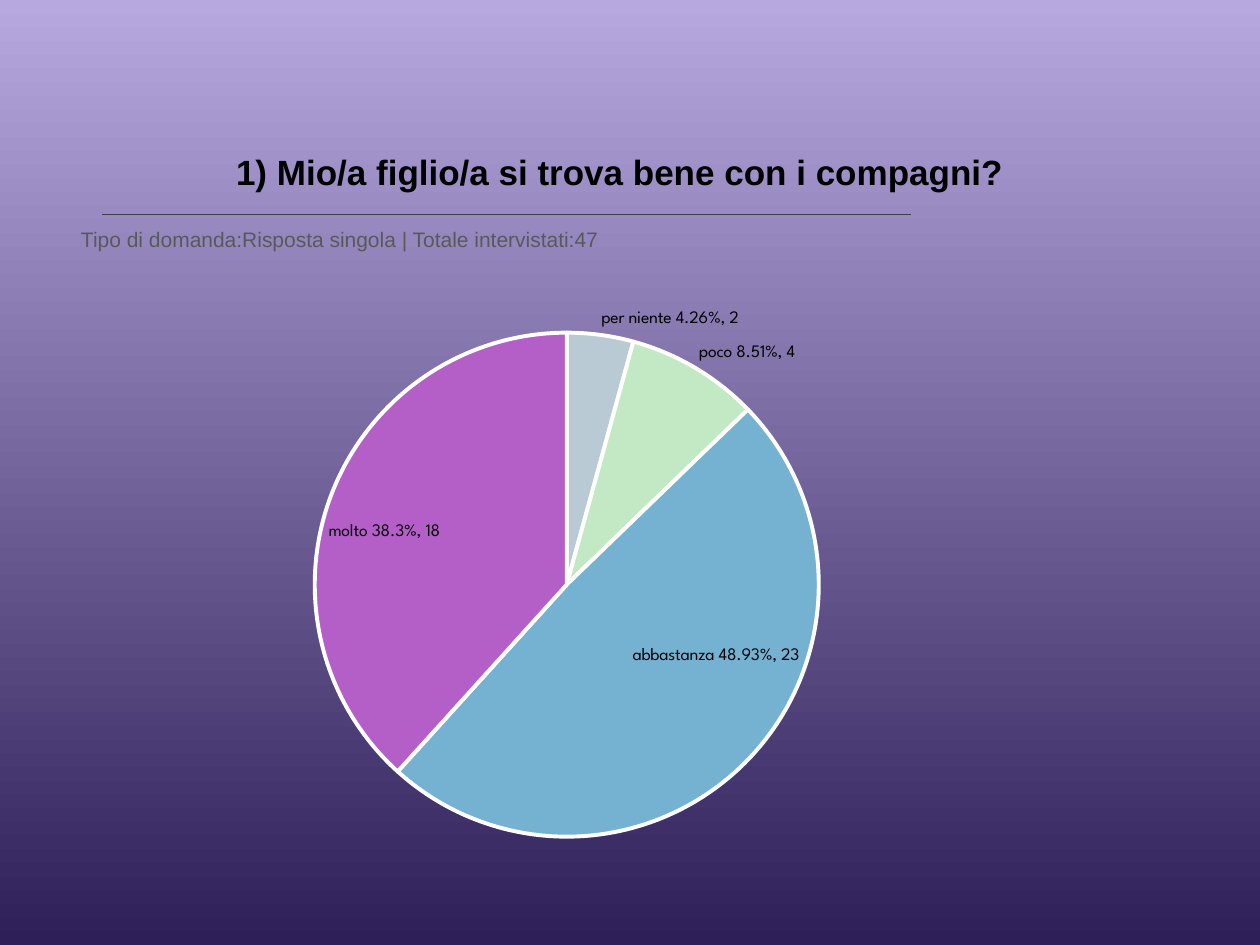
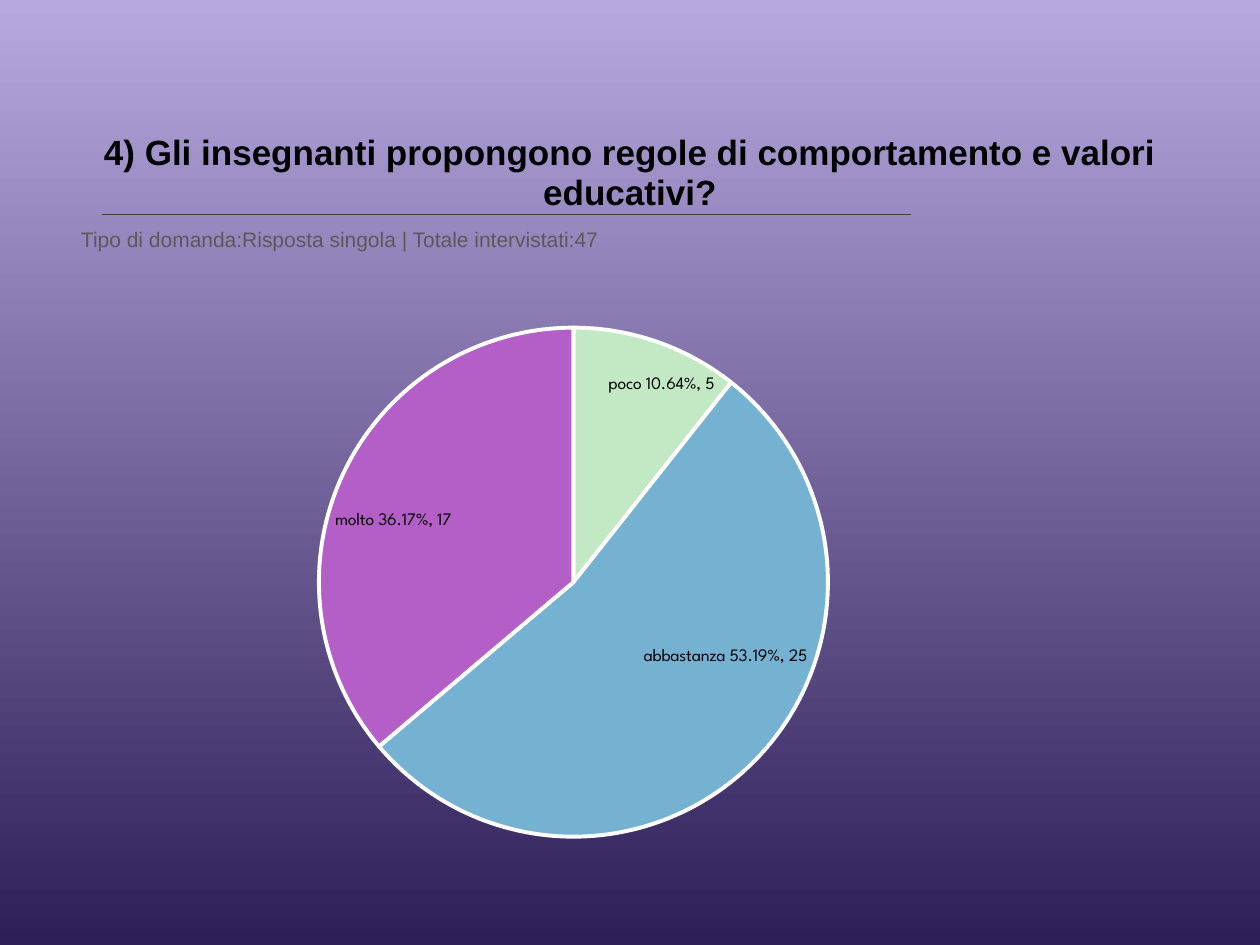
import pptx
import pptx.chart.data
import pptx.dml.color
import pptx.enum.chart
import pptx.enum.shapes
import pptx.enum.text
import pptx.oxml
import pptx.util
from pptx.util import Inches

# Shared look
TITLE_FONT = {"name": "Arial", "size": 20, "bold": True, "color": "000000"}
NOTE_FONT = {"name": "Arial", "size": 12, "bold": False, "color": "595959"}
CHART_FONT = {"name": "League Spartan", "size": 18, "bold": False, "color": "000000"}
LABEL_FONT = {**CHART_FONT, "size": 10}
GRADIENT = ["B7A9E0", "2F1F58"]
RULE_COLOR = "404040"
SLICE_LINE = "FFFFFF"
PERCENT = "0.##%"
NOTE = " Tipo di domanda:Risposta singola | Totale intervistati:47"

TITLE_BOX = (0.5, 1.09, 9, 0.58)
NOTE_BOX = (0.5, 1.75, 9, 0.42)
CHART_BOX = (1.33, 2.33, 6.67, 4.44)

# Answers and their slice colours
ANSWERS = {"per niente": "BACAD4", "poco": "C2E8C4",
           "abbastanza": "75B2D2", "molto": "B45EC7"}

# Per question: title, its right inset, shares, labels, pie centre and radius
QUESTIONS = [
    ("1) Mio/a figlio/a si trova bene con i compagni?", 0.26,
     [0.0426, 0.0851, 0.4894, 0.383],
     ["per niente 4.26%, 2", "poco 8.51%, 4", "abbastanza 48.93%, 23", "molto 38.3%, 18"],
     (4.5, 4.64, 2.0)),
    ("4) Gli insegnanti propongono regole di comportamento e valori educativi?", 0.1,
     [0, 0.1064, 0.5319, 0.3617],
     [None, "poco 10.64%, 5", "abbastanza 53.19%, 25", "molto 36.17%, 17"],
     (4.55, 4.62, 2.02)),
]


def rgb(color):
    return pptx.dml.color.RGBColor.from_string(color)


def set_all(target, values):
    for name, value in values.items():
        setattr(target, name, value)


def set_font(font, style):
    set_all(font, {"name": style["name"], "size": pptx.util.Pt(style["size"]),
                   "bold": style["bold"]})
    font.color.rgb = rgb(style["color"])


def drawing_element(tag):
    ns = "http://schemas.openxmlformats.org/drawingml/2006/main"
    return pptx.oxml.parse_xml(f'<a:{tag} xmlns:a="{ns}"/>')


def set_background(master):
    fill = master.background.fill
    fill.gradient()
    fill.gradient_angle = 270
    for stop, color in zip(fill.gradient_stops, GRADIENT):
        stop.color.rgb = rgb(color)


def fill_placeholder(sp, box, text, frame):
    set_all(sp, dict(zip(("left", "top", "width", "height"), map(Inches, box))))
    tf = sp.text_frame
    set_all(tf, {"word_wrap": True, "auto_size": pptx.enum.text.MSO_AUTO_SIZE.NONE, **frame})
    tf.text = text
    return tf.paragraphs[0]


def add_title(s, text, inset):
    p = fill_placeholder(s.shapes.title, TITLE_BOX, text, {
        "vertical_anchor": pptx.enum.text.MSO_ANCHOR.MIDDLE,
        "margin_right": Inches(inset)})
    set_all(p, {"alignment": pptx.enum.text.PP_ALIGN.CENTER, "line_spacing": 0.95})
    set_font(p.runs[0].font, TITLE_FONT)


def add_note(s):
    p = fill_placeholder(s.placeholders[1], NOTE_BOX, NOTE, {
        "vertical_anchor": pptx.enum.text.MSO_ANCHOR.TOP})
    pPr = p._p.get_or_add_pPr()
    pPr.set("marL", str(Inches(0.5)))
    pPr.set("indent", str(-Inches(0.5)))
    pPr.append(drawing_element("buNone"))
    p.space_before = pptx.util.Pt(0)
    set_font(p.runs[0].font, NOTE_FONT)


def add_rule(s):
    line = s.shapes.add_connector(pptx.enum.shapes.MSO_CONNECTOR.STRAIGHT,
                                  Inches(0.81), Inches(1.7), Inches(7.23), Inches(1.7))
    line.line.color.rgb = rgb(RULE_COLOR)
    line.line.width = pptx.util.Pt(0.75)
    line._element.spPr.append(drawing_element("effectLst"))


def set_plot_area(chart, pie):
    """Fix the pie's place as fractions of the chart box."""
    x, y, radius = pie
    left, top, width, height = CHART_BOX
    parts = {"x": (x - radius - left) / width, "y": (y - radius - top) / height,
             "w": 2 * radius / width, "h": 2 * radius / height}
    values = "".join(f'<c:{key} val="{value:.3f}"/>' for key, value in parts.items())
    area = chart._chartSpace.chart.plotArea
    for old in area.xpath("c:layout"):
        area.remove(old)
    ns = "http://schemas.openxmlformats.org/drawingml/2006/chart"
    area.insert(0, pptx.oxml.parse_xml(
        f'<c:layout xmlns:c="{ns}"><c:manualLayout><c:layoutTarget val="inner"/>'
        f'<c:xMode val="edge"/><c:yMode val="edge"/>{values}</c:manualLayout></c:layout>'))


def add_pie(s, shares, labels, pie):
    data = pptx.chart.data.CategoryChartData(number_format=PERCENT)
    data.categories = list(ANSWERS)
    data.add_series("Series 1", shares)
    chart = s.shapes.add_chart(pptx.enum.chart.XL_CHART_TYPE.PIE,
                               *map(Inches, CHART_BOX), data).chart
    set_all(chart, {"has_legend": False, "has_title": False})
    set_font(chart.font, CHART_FONT)
    set_plot_area(chart, pie)
    chart.plots[0].vary_by_categories = True

    # Label defaults
    series = chart.plots[0].series[0]
    best_fit = pptx.enum.chart.XL_LABEL_POSITION.BEST_FIT
    set_all(series.data_labels, {
        "show_value": True, "show_category_name": True, "position": best_fit,
        "number_format": PERCENT, "number_format_is_linked": False})
    set_font(series.data_labels.font, LABEL_FONT)

    # Slices and their labels
    for i, (color, label) in enumerate(zip(ANSWERS.values(), labels)):
        point = series.points[i]
        point.format.fill.solid()
        point.format.fill.fore_color.rgb = rgb(color)
        point.format.line.color.rgb = rgb(SLICE_LINE)
        point.format.line.width = pptx.util.Pt(2.25)
        if label:
            r = point.data_label.text_frame.paragraphs[0].add_run()
            r.text = label
            set_font(r.font, LABEL_FONT)
            point.data_label.position = best_fit


def main():
    prs = pptx.Presentation()
    set_all(prs, {"slide_width": Inches(10), "slide_height": Inches(7.5)})
    set_background(prs.slide_master)
    for title, inset, shares, labels, pie in QUESTIONS:
        s = prs.slides.add_slide(prs.slide_layouts[1])
        add_rule(s)
        add_title(s, title, inset)
        add_note(s)
        add_pie(s, shares, labels, pie)
    prs.save("out.pptx")


if __name__ == "__main__":
    main()
